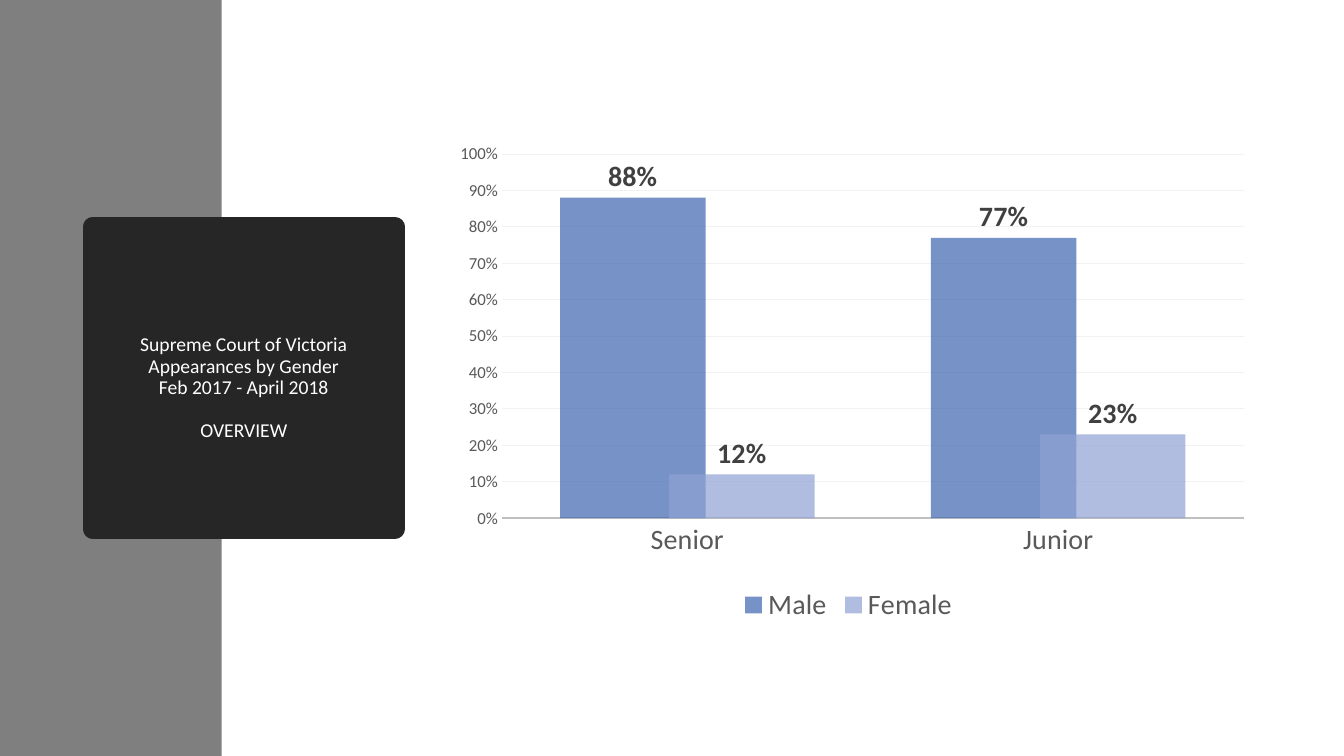
from dataclasses import dataclass

from lxml.etree import SubElement
from pptx import Presentation
from pptx.chart.data import CategoryChartData
from pptx.dml.color import RGBColor
from pptx.enum.chart import (XL_CHART_TYPE as ChartType, XL_LABEL_POSITION as LabelPos,
                             XL_LEGEND_POSITION as LegendPos, XL_TICK_MARK as Tick)
from pptx.enum.shapes import MSO_SHAPE as Shape
from pptx.enum.text import MSO_ANCHOR as Anchor, PP_ALIGN as Align
from pptx.oxml import parse_xml
from pptx.oxml.ns import nsdecls, qn
from pptx.util import Pt


@dataclass(frozen=True)
class Theme:
    font: str = "Calibri"
    band: str = "7F7F7F"
    panel: str = "262626"
    panel_text: str = "FFFFFF"
    male: str = "3C65AE"
    female: str = "90A2D3"
    bar_opacity: int = 70
    text: str = "595959"
    value_text: str = "404040"
    axis: str = "BFBFBF"
    grid: str = "F2F2F2"
    title_size: float = 14
    scale_size: float = 12
    label_size: float = 20


class SlideBuilder:
    def __init__(self, slide, theme):
        self.slide = slide
        self.theme = theme

    def style_font(self, font, size, color, bold=False):
        font.name = self.theme.font
        font.size = Pt(size)
        font.bold = bold
        font.color.rgb = RGBColor.from_string(color)

    def style_line(self, line, color, width):
        line.color.rgb = RGBColor.from_string(color)
        line.width = Pt(width)

    def block(self, left, top, width, height, color, border=0):
        """Filled rectangle; a border has rounded joins."""
        block = self.slide.shapes.add_shape(
            Shape.RECTANGLE, Pt(left), Pt(top), Pt(width), Pt(height))
        block.shadow.inherit = False
        block.fill.solid()
        block.fill.fore_color.rgb = RGBColor.from_string(color)
        if border:
            self.style_line(block.line, color, border)
            SubElement(block.line._get_or_add_ln(), qn("a:round"))
        else:
            block.line.fill.background()
        return block

    def title(self, panel, lines, overview):
        frame = panel.text_frame
        frame.word_wrap = True
        frame.vertical_anchor = Anchor.MIDDLE
        frame.margin_top, frame.margin_bottom = Pt(18), Pt(3.6)
        for index, wording in enumerate([*lines, overview]):
            paragraph = frame.add_paragraph() if index else frame.paragraphs[0]
            paragraph.text = wording
            paragraph.alignment = Align.CENTER
            paragraph.line_spacing = 0.9
            self.style_font(paragraph.font, self.theme.title_size, self.theme.panel_text)
        paragraph.space_before = Pt(15.4)

    def column_chart(self, left, top, width, height, categories, series, plot_box):
        theme = self.theme
        data = CategoryChartData(number_format="0%")
        data.categories = categories
        for name, values, _ in series:
            data.add_series(name, values)
        chart = self.slide.shapes.add_chart(
            ChartType.COLUMN_CLUSTERED, Pt(left), Pt(top), Pt(width), Pt(height), data).chart
        self.style_font(chart.font, theme.scale_size, theme.text)
        chart.has_title = False

        # Legend
        chart.has_legend = True
        chart.legend.position = LegendPos.BOTTOM
        chart.legend.include_in_layout = False
        self.style_font(chart.legend.font, theme.label_size, theme.text)

        # Axes
        groups, scale = chart.category_axis, chart.value_axis
        for axis, size in ((groups, theme.label_size), (scale, theme.scale_size)):
            axis.major_tick_mark = axis.minor_tick_mark = Tick.NONE
            self.style_font(axis.tick_labels.font, size, theme.text)
        self.style_line(groups.format.line, theme.axis, 1.25)
        scale.format.line.fill.background()
        scale.minimum_scale, scale.maximum_scale, scale.major_unit = 0, 1, 0.1
        scale.tick_labels.number_format = "0%"
        scale.tick_labels.number_format_is_linked = False
        self.style_line(scale.major_gridlines.format.line, theme.grid, 0.75)

        # Columns and their values
        plot = chart.plots[0]
        plot.gap_width, plot.overlap = 80, 25
        plot.vary_by_categories = False
        for columns, (_, _, color) in zip(plot.series, series):
            columns.invert_if_negative = False
            columns.format.fill.solid()
            columns.format.fill.fore_color.rgb = RGBColor.from_string(color)
            for tint in columns.format.element.iter(qn("a:srgbClr")) if hasattr(
                    columns.format, "element") else columns._element.spPr.iter(qn("a:srgbClr")):
                SubElement(tint, qn("a:alpha"), val=str(theme.bar_opacity * 1000))
            labels = columns.data_labels
            labels.show_value = True
            labels.number_format = "0%"
            labels.number_format_is_linked = False
            labels.position = LabelPos.OUTSIDE_END
            self.style_font(labels.font, theme.label_size, theme.value_text, bold=True)

        self.place_plot(chart, plot_box)

    def place_plot(self, chart, plot_box):
        """Fix the inner plot area as fractions of the chart frame."""
        area = chart._chartSpace.chart.plotArea
        for layout in area.findall(qn("c:layout")):
            area.remove(layout)
        modes = "".join(f'<c:{side}Mode val="edge"/>' for side in "xy")
        sizes = "".join(f'<c:{side} val="{share}"/>' for side, share in zip("xywh", plot_box))
        area.insert(0, parse_xml(
            f'<c:layout {nsdecls("c")}><c:manualLayout><c:layoutTarget val="inner"/>'
            f'{modes}{sizes}</c:manualLayout></c:layout>'))


def main():
    deck = Presentation()
    deck.slide_width, deck.slide_height = Pt(960), Pt(540)
    theme = Theme()
    builder = SlideBuilder(deck.slides.add_slide(deck.slide_layouts[6]), theme)

    # Side band and title panel
    builder.block(0, 0, 158.4, 540, theme.band)
    panel = builder.block(66.2, 162, 216, 216, theme.panel, border=13.75)
    builder.title(
        panel,
        ["Supreme Court of Victoria", "Appearances by Gender", "Feb 2017 - April 2018"],
        "OVERVIEW")

    # Appearances by gender
    builder.column_chart(
        318.2, 92.2, 576, 356.4,
        categories=["Senior", "Junior"],
        series=[("Male", (0.88, 0.77), theme.male),
                ("Female", (0.12, 0.23), theme.female)],
        plot_box=(0.07, 0.05, 0.92, 0.73))

    deck.save("out.pptx")


if __name__ == "__main__":
    main()
